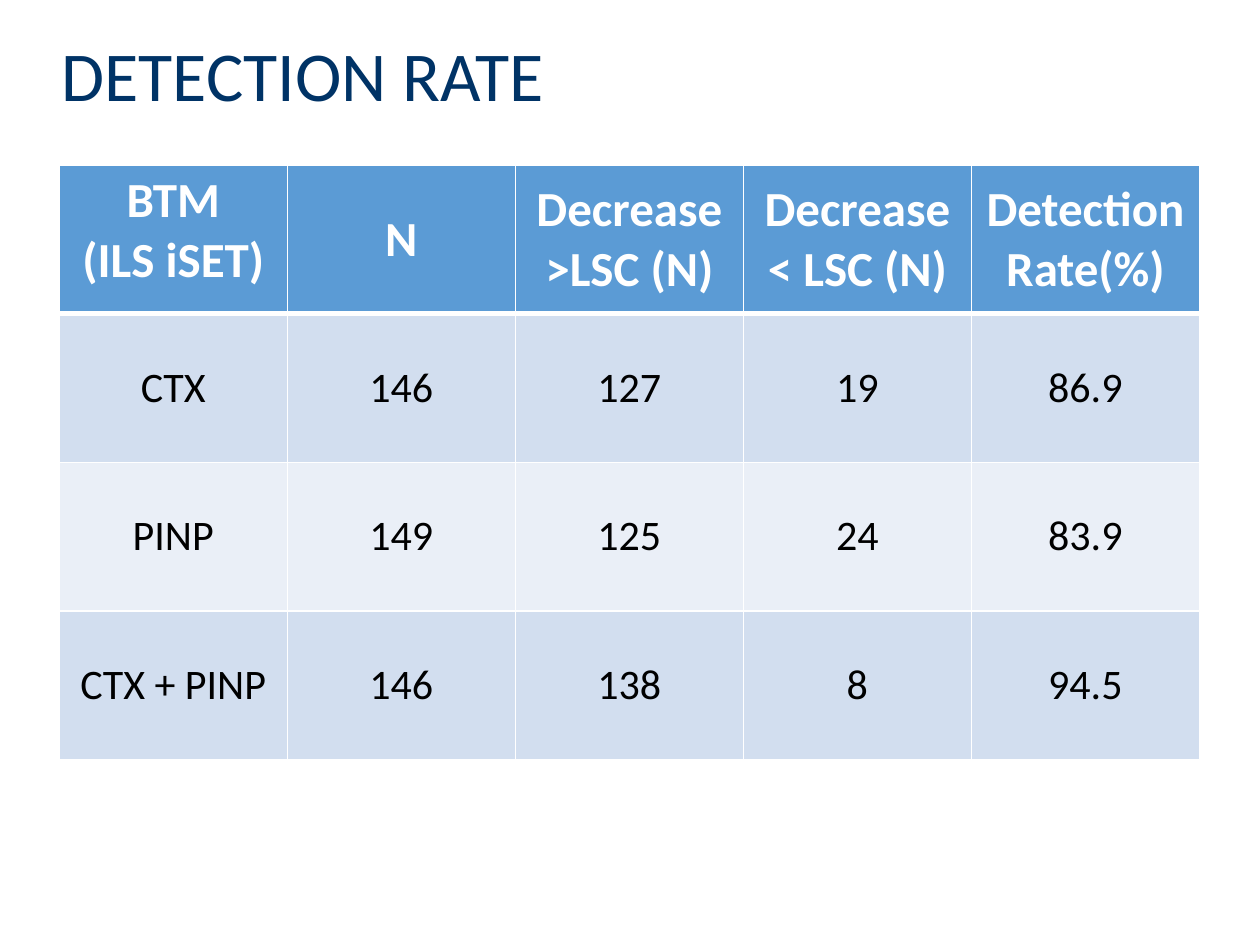
from pptx import Presentation, util as u
from pptx.dml.color import RGBColor
from pptx.enum import text
from pptx.oxml import parse_xml
from pptx.oxml.ns import nsdecls

TITLE = "DETECTION RATE"
ROWS = [
    ["BTM\n(ILS iSET)", "N", "Decrease\n>LSC (N)", "Decrease\n< LSC (N)", "Detection\nRate(%)"],
    ["CTX", "146", "127", "19", "86.9"],
    ["PINP", "149", "125", "24", "83.9"],
    ["CTX + PINP", "146", "138", "8", "94.5"],
]
W, H = 10, 7.5
LEFT, TOP, COL_W, ROW_H = 0.47, 1.31, 1.81, 1.18
HEAD_FILL, BANDS, LINE = "5B9BD5", ["D2DEEF", "EAEFF7"], "FFFFFF"
TITLE_FONT = {"name": "Calibri", "size": u.Pt(40), "color": "003366"}
HEAD_FONT = {"name": "Calibri", "size": u.Pt(28), "bold": True, "color": "FFFFFF"}
BODY_FONT = {"name": "Calibri", "size": u.Pt(24), "bold": False, "color": "000000"}


def rgb(value):
    return RGBColor.from_string(value)


def style(font, fmt):
    for key, value in fmt.items():
        if key == "color":
            font.color.rgb = rgb(value)
        else:
            setattr(font, key, value)


def border(cell, side, points):
    cell._tc.get_or_add_tcPr().append(parse_xml(
        f'<a:ln{side} {nsdecls("a")} w="{u.Pt(points)}"><a:solidFill>'
        f'<a:srgbClr val="{LINE}"/></a:solidFill></a:ln{side}>'))


prs = Presentation()
prs.slide_width, prs.slide_height = u.Inches(W), u.Inches(H)
s = prs.slides.add_slide(prs.slide_layouts[6])

tbl = s.shapes.add_table(
    len(ROWS), len(ROWS[0]), u.Inches(LEFT), u.Inches(TOP),
    u.Inches(COL_W * len(ROWS[0])), u.Inches(ROW_H * len(ROWS))).table
for i, row in enumerate(ROWS):
    for j, words in enumerate(row):
        cell = tbl.cell(i, j)
        for side in "LRTB":
            thick = (i, side) in [(0, "B"), (1, "T")]
            border(cell, side, 3 if thick else 1)
        cell.fill.solid()
        cell.fill.fore_color.rgb = rgb(BANDS[(i - 1) % 2] if i else HEAD_FILL)
        cell.vertical_anchor = text.MSO_ANCHOR.MIDDLE if i or j else text.MSO_ANCHOR.TOP
        cell.text = words
        for p in cell.text_frame.paragraphs:
            p.alignment = text.PP_ALIGN.CENTER
            style(p.runs[0].font, BODY_FONT if i else HEAD_FONT)

sp = s.shapes.add_textbox(u.Inches(0.39), u.Inches(0.3), u.Inches(7.83), u.Inches(0.66))
tf = sp.text_frame
tf.word_wrap = True
tf.vertical_anchor = text.MSO_ANCHOR.MIDDLE
p = tf.paragraphs[0]
p.line_spacing = 0.9
r = p.add_run()
r.text = TITLE
style(r.font, TITLE_FONT)

prs.save("out.pptx")
